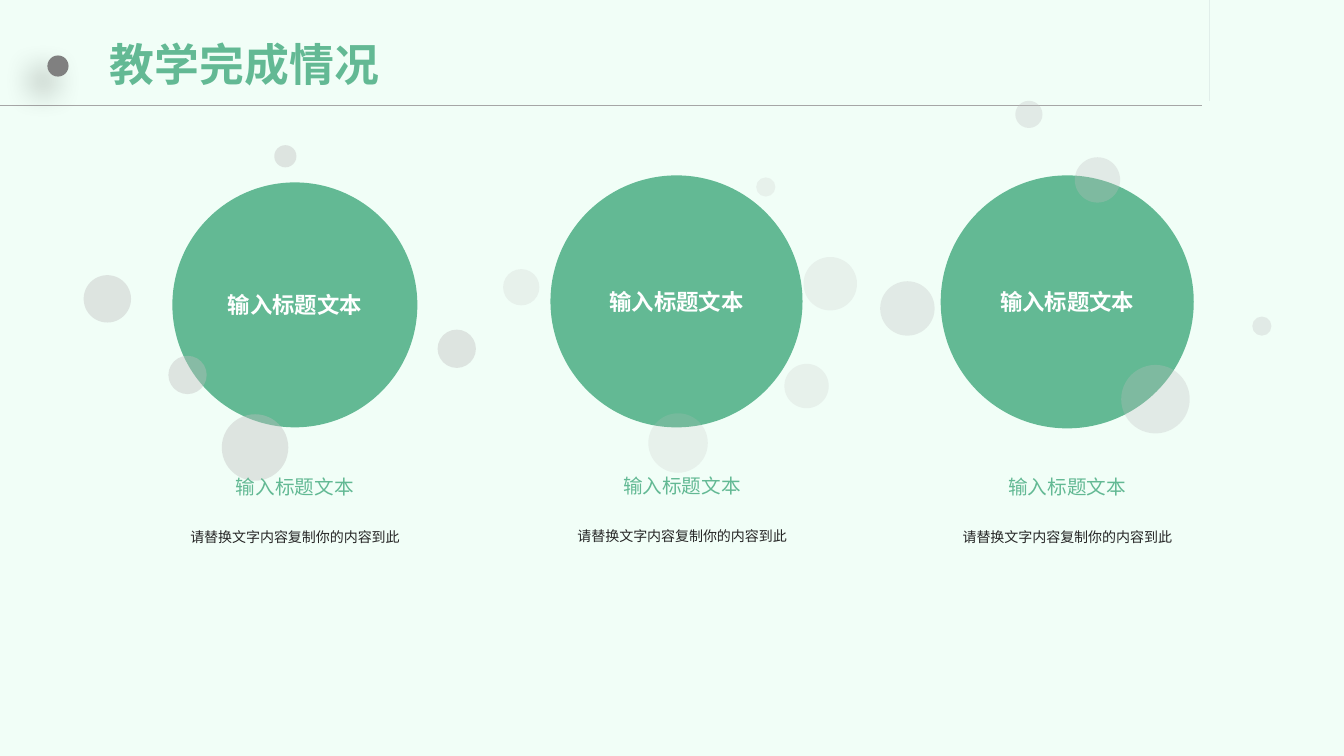
from pptx import Presentation
from pptx.dml.color import RGBColor
from pptx.enum.shapes import MSO_CONNECTOR as Line, MSO_SHAPE as Shape
from pptx.enum.text import MSO_ANCHOR as Anchor, PP_ALIGN as Align
from pptx.oxml import parse_xml
from pptx.oxml.ns import qn
from pptx.util import Inches, Pt
from lxml import etree

MINT = RGBColor(0xF1, 0xFE, 0xF7)
GREEN = RGBColor(0x63, 0xB9, 0x94)
GREY = RGBColor(0xA6, 0xA6, 0xA6)
DOT = RGBColor(0x80, 0x80, 0x80)
PALE = RGBColor(0xBF, 0xBF, 0xBF)
SLATE = RGBColor(0x77, 0x84, 0x95)
INK = RGBColor(0x26, 0x26, 0x26)
WHITE = RGBColor(0xFF, 0xFF, 0xFF)
CJK = "Noto Sans CJK SC"
NS = 'xmlns:a="http://schemas.openxmlformats.org/drawingml/2006/main"'

deck = Presentation()
deck.slide_width, deck.slide_height = Inches(13.33), Inches(7.5)
slide = deck.slides.add_slide(deck.slide_layouts[6])
slide.background.fill.solid()
slide.background.fill.fore_color.rgb = MINT
shapes = slide.shapes


def disc(x, y, size, color, alpha=100):
    oval = shapes.add_shape(Shape.OVAL, Inches(x), Inches(y), Inches(size), Inches(size))
    oval.shadow.inherit = False
    oval.fill.solid()
    oval.fill.fore_color.rgb = color
    oval.line.fill.background()
    if alpha < 100:
        tint = oval.fill._xPr.find(".//" + qn("a:srgbClr"))
        etree.SubElement(tint, qn("a:alpha")).set("val", str(alpha * 1000))
    return oval


def write(shape, text, size, color, bold=False, font="Arial", align=Align.CENTER,
          anchor=Anchor.MIDDLE, inset=(0, 0, 0, 0), wrap=False, space=1.0):
    frame = shape.text_frame
    frame.word_wrap = wrap
    frame.vertical_anchor = anchor
    (frame.margin_left, frame.margin_top,
     frame.margin_right, frame.margin_bottom) = map(Inches, inset)
    para = frame.paragraphs[0]
    para.alignment, para.line_spacing = align, space
    run = para.add_run()
    run.text = text
    run.font.size, run.font.bold, run.font.name = Pt(size), bold, font
    run.font.color.rgb = color
    etree.SubElement(run.font._element, qn("a:ea")).set("typeface", CJK)


# Title, rule and dot
title = shapes.add_textbox(Inches(1.02), Inches(0.19), Inches(10.91), Inches(0.94))
write(title, "教学完成情况", 32, GREEN, True, CJK, Align.LEFT,
      inset=(0.07, 0.04, 0.07, 0.04), wrap=True, space=0.9)
rule = shapes.add_connector(Line.STRAIGHT, 0, Inches(1.05), Inches(11.92), Inches(1.05))
rule.line.color.rgb = GREY
rule.line.width = Pt(0.75)
etree.SubElement(rule._element.spPr, qn("a:effectLst"))

dot = disc(0.47, 0.55, 0.21, DOT)
glow = dot._element.spPr.find(qn("a:effectLst"))
glow.append(parse_xml(
    f'<a:outerShdw {NS} blurRad="{Pt(22)}" dist="{Pt(15)}" dir="8100000" algn="tr" '
    'rotWithShape="0"><a:srgbClr val="000000"><a:alpha val="40000"/></a:srgbClr>'
    '</a:outerShdw>'))

# Pen: outline, then the openings in barrel and cap
edge = [(12.34, 0.49), (12.32, 0.47), (12.29, 0.46), (12.24, 0.54), (12.21, 0.61),
        (12.21, 0.62), (12.04, 0.95), (12.05, 0.95), (12.03, 0.98), (12.04, 0.99),
        (12.03, 1.01), (12.02, 1.04), (12.02, 1.05), (12.04, 1.01), (12.05, 1.02),
        (12.07, 1.0), (12.08, 0.97), (12.09, 0.98), (12.26, 0.65), (12.27, 0.64),
        (12.33, 0.52), (12.28, 0.61), (12.28, 0.62), (12.34, 0.51)]
barrel = [(12.25, 0.65), (12.09, 0.97), (12.05, 0.95), (12.16, 0.74), (12.18, 0.69),
          (12.22, 0.62), (12.23, 0.62), (12.25, 0.64), (12.26, 0.64)]
cap = [(12.26, 0.63), (12.22, 0.61), (12.29, 0.47), (12.31, 0.48), (12.34, 0.49)]
form = shapes.build_freeform(*edge[0], scale=Inches(1))
form.add_line_segments(edge[1:])
for hole in (barrel, cap):
    form.move_to(*hole[0])
    form.add_line_segments(hole[1:])
pen = form.convert_to_shape()
pen.shadow.inherit = False
pen.fill.solid()
pen.fill.fore_color.rgb = SLATE
pen.line.fill.background()

# Three circles: place and size, bubble opacity, bubbles, caption corner
groups = [
    ((1.71, 1.81, 2.43), 40, [(4.34, 3.27, 0.38), (1.67, 3.53, 0.38), (2.2, 4.11, 0.66),
                              (2.72, 1.44, 0.22), (0.83, 2.73, 0.47)], (1.62, 4.25)),
    ((5.46, 1.74, 2.5), 20, [(4.99, 2.67, 0.36), (6.43, 4.1, 0.59), (7.5, 1.76, 0.19),
                             (7.78, 3.61, 0.44), (7.97, 2.55, 0.53)], (5.46, 4.24)),
    ((9.33, 1.74, 2.51), 30, [(8.73, 2.79, 0.54), (10.07, 1, 0.27), (11.12, 3.62, 0.68),
                              (12.42, 3.14, 0.19), (10.66, 1.56, 0.45)], (9.28, 4.25)),
]
for ball, alpha, bubbles, (x, y) in groups:
    write(disc(*ball, GREEN), "输入标题文本", 16, WHITE, True)
    for bubble in bubbles:
        disc(*bubble, PALE, alpha)
    head = shapes.add_textbox(Inches(x), Inches(y), Inches(2.61), Inches(0.7))
    write(head, "输入标题文本", 14, GREEN, anchor=Anchor.BOTTOM)
    body = shapes.add_textbox(Inches(x), Inches(y + 0.7), Inches(2.61), Inches(0.92))
    write(body, "请替换文字内容复制你的内容到此", 10, INK,
          inset=(0.1, 0.05, 0.1, 0.25), wrap=True, space=1.2)

deck.save("out.pptx")
